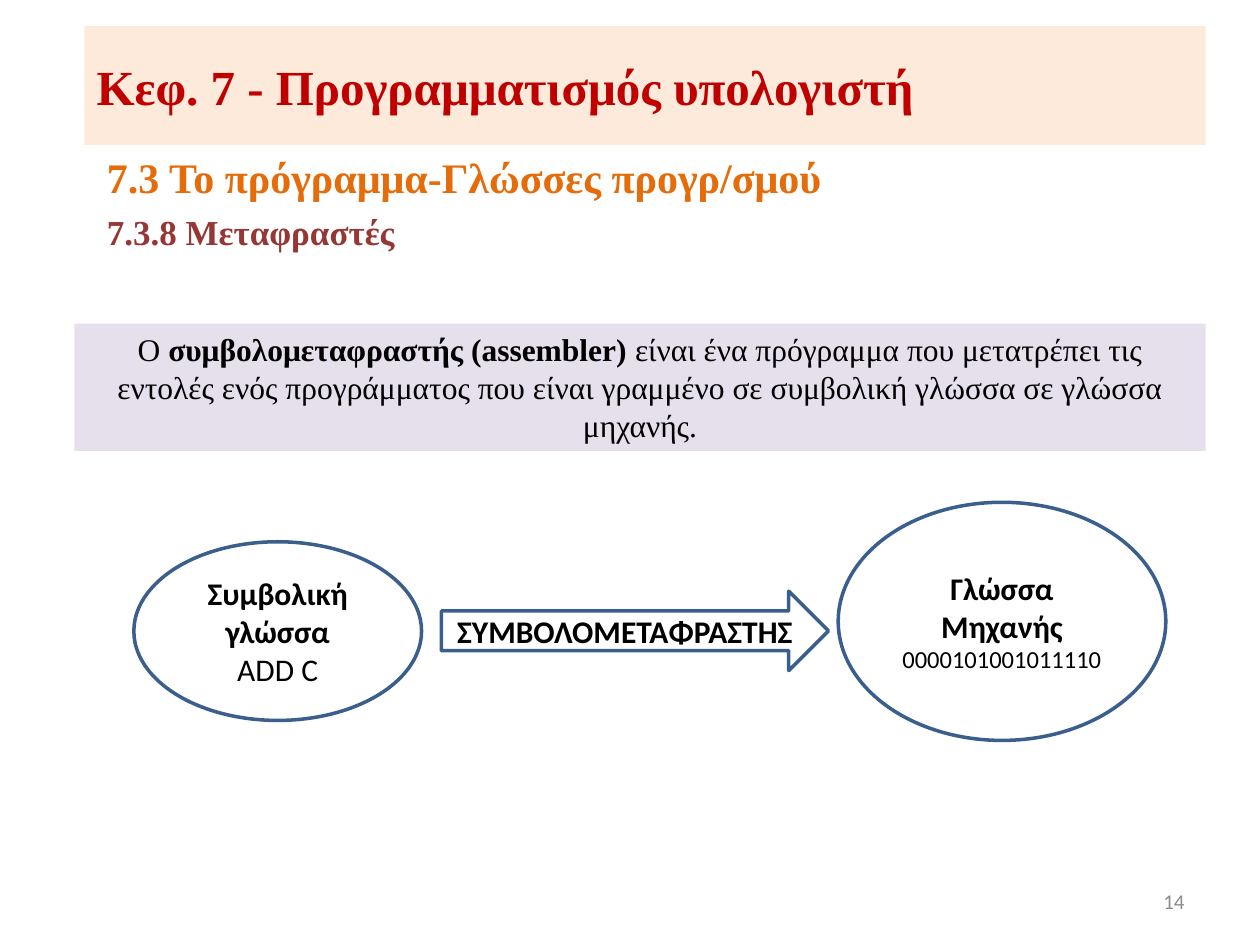
"""Build the slide about the assembler as a translator from symbolic to machine language."""
from pptx import Presentation
from pptx.dml.color import RGBColor
from pptx.enum.shapes import MSO_SHAPE
from pptx.enum.text import MSO_ANCHOR, PP_ALIGN
from pptx.util import Pt

COLORS = {
    "title": "C00000", "title_fill": "FDEADA", "section": "E46C0A",
    "subsection": "953735", "definition_fill": "E6E0EC", "black": "000000",
    "white": "FFFFFF", "outline": "3A5F8C", "number": "8C8C8C",
}
SERIF, SANS = "Times New Roman", "Calibri"


def write_text(shape, paragraphs, font=SERIF, size=18, color="black",
               align=PP_ALIGN.LEFT, anchor=MSO_ANCHOR.TOP):
    frame = shape.text_frame
    frame.word_wrap = True
    frame.vertical_anchor = anchor
    for index, runs in enumerate(paragraphs):
        paragraph = frame.paragraphs[0] if index == 0 else frame.add_paragraph()
        paragraph.alignment = align
        for text, bold, *run_size in runs:
            run = paragraph.add_run()
            run.text = text
            run.font.name = font
            run.font.size = Pt(run_size[0] if run_size else size)
            run.font.bold = bold
            run.font.color.rgb = RGBColor.from_string(COLORS[color])


def add_filled_shape(kind, box, fill, outline=None):
    shape = slide.shapes.add_shape(kind, *map(Pt, box))
    shape.shadow.inherit = False
    shape.fill.solid()
    shape.fill.fore_color.rgb = RGBColor.from_string(COLORS[fill])
    if outline:
        shape.line.color.rgb = RGBColor.from_string(COLORS[outline])
        shape.line.width = Pt(2)
    else:
        shape.line.fill.background()
    return shape


presentation = Presentation()
presentation.slide_width, presentation.slide_height = Pt(720), Pt(540)
slide = presentation.slides.add_slide(presentation.slide_layouts[6])

title = add_filled_shape(MSO_SHAPE.RECTANGLE, (48.2, 15, 640.8, 67.8), "title_fill")
write_text(title, [[("Κεφ. 7 - Προγραμματισμός υπολογιστή", True)]],
           size=28, color="title", anchor=MSO_ANCHOR.MIDDLE)

headings = [
    ("7.3 Το πρόγραμμα-Γλώσσες προγρ/σμού", (54, 82.8, 504, 39.6), 24, "section"),
    ("7.3.8 Μεταφραστές", (54, 116.6, 187.2, 39.6), 20, "subsection"),
]
for text, box, size, color in headings:
    heading = slide.shapes.add_textbox(*map(Pt, box))
    write_text(heading, [[(text, True)]], size=size, color=color)

definition = add_filled_shape(MSO_SHAPE.RECTANGLE, (42.5, 185, 646.5, 72.7), "definition_fill")
write_text(definition, [[
    ("Ο ", False),
    ("συμβολομεταφραστής (assembler) ", True),
    ("είναι ένα πρόγραμμα που μετατρέπει τις εντολές ενός προγράμματος που είναι "
     "γραμμένο σε συμβολική γλώσσα σε γλώσσα μηχανής.", False),
]], align=PP_ALIGN.CENTER)

translation_steps = [
    (MSO_SHAPE.OVAL, (76.5, 309.6, 164.4, 102.1),
     [[("Συμβολική γλώσσα", True)], [("ADD C", False)]]),
    (MSO_SHAPE.RIGHT_ARROW, (252.2, 337.8, 221.2, 45.4),
     [[("ΣΥΜΒΟΛΟΜΕΤΑΦΡΑΣΤΗΣ", True)]]),
    (MSO_SHAPE.OVAL, (479, 287, 187.2, 136.1),
     [[("Γλώσσα", True)], [("Μηχανής ", True), ("0000101001011110", False, 14)]]),
]
for kind, box, paragraphs in translation_steps:
    step = add_filled_shape(kind, box, "white", "outline")
    write_text(step, paragraphs, font=SANS, align=PP_ALIGN.CENTER, anchor=MSO_ANCHOR.MIDDLE)

slide_number = slide.shapes.add_textbox(Pt(516), Pt(500.5), Pt(168), Pt(28.8))
write_text(slide_number, [[("14", False)]], font=SANS, size=12, color="number",
           align=PP_ALIGN.RIGHT, anchor=MSO_ANCHOR.MIDDLE)

presentation.save("out.pptx")
